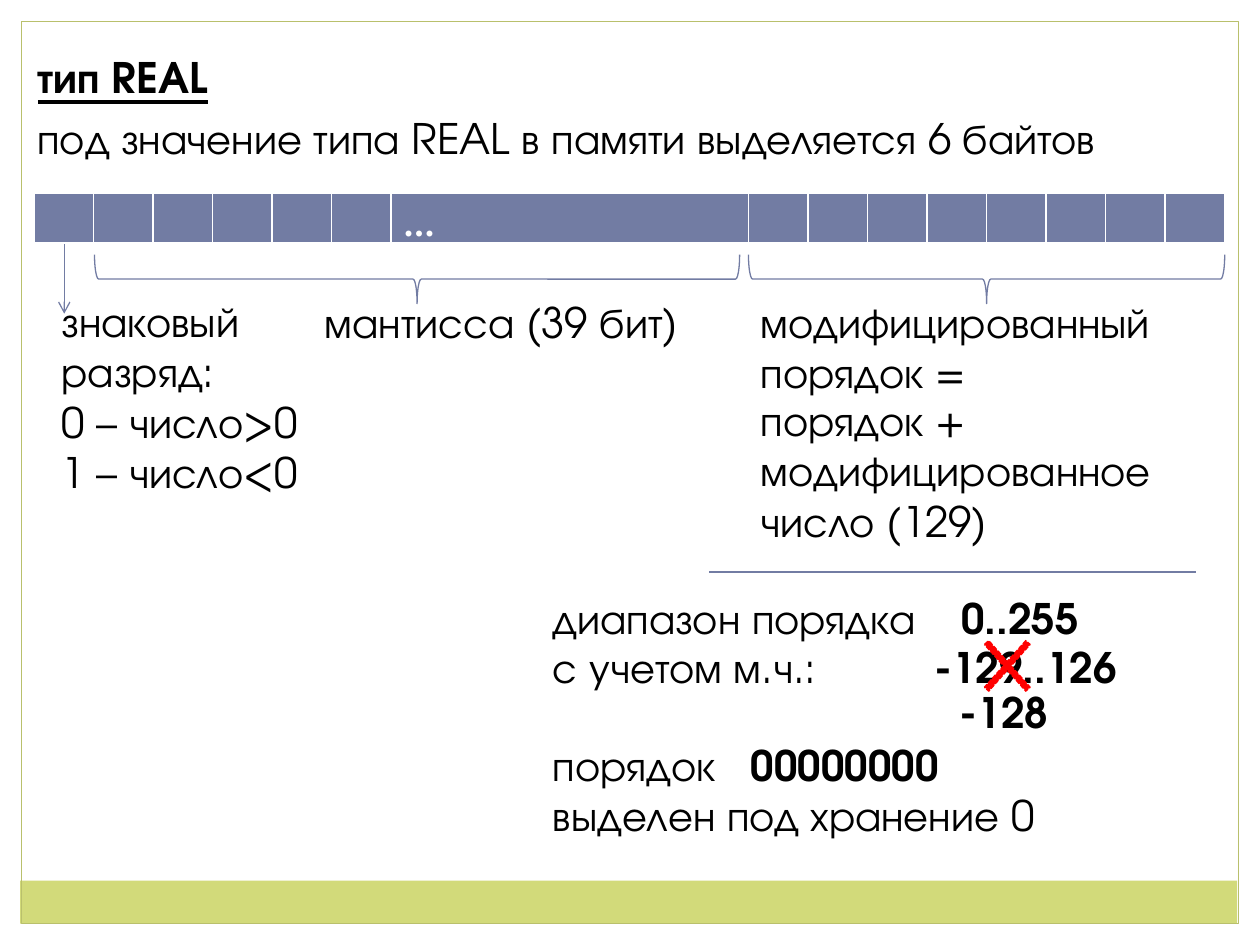
from lxml import etree
from pptx import Presentation
from pptx.dml.color import RGBColor
from pptx.enum.dml import MSO_LINE
from pptx.enum.shapes import MSO_CONNECTOR, MSO_SHAPE
from pptx.enum.text import MSO_ANCHOR, PP_ALIGN
from pptx.oxml.ns import qn
from pptx.util import Inches, Pt

RECTANGLE = MSO_SHAPE.RECTANGLE
BRACE = MSO_SHAPE.RIGHT_BRACE
CALLOUT = MSO_SHAPE.LINE_CALLOUT_2
CROSS = MSO_SHAPE.MATH_MULTIPLY
STRAIGHT = MSO_CONNECTOR.STRAIGHT
DASHED = MSO_LINE.SQUARE_DOT
LEFT = PP_ALIGN.LEFT
TOP, MIDDLE = MSO_ANCHOR.TOP, MSO_ANCHOR.MIDDLE

COLORS = {
    "text": "000000",
    "paper": "FFFFFF",
    "bits": "727CA3",
    "band": "D2DA7A",
    "frame": "B9C06C",
    "wrong": "FF0000",
}
BODY_FONT = "TeX Gyre Adventor"
TABLE_FONT = "TeX Gyre Schola"


def rgb(name):
    return RGBColor.from_string(COLORS[name])


def write(frame, *lines, size=24, font=BODY_FONT, color="text", bold=False,
          underline=False, anchor=TOP, tab=None):
    """Fill a text frame, one paragraph a line; what follows a tab is bold."""
    frame.word_wrap = True
    frame.vertical_anchor = anchor
    for index, line in enumerate(lines):
        paragraph = frame.paragraphs[0] if index == 0 else frame.add_paragraph()
        paragraph.alignment = LEFT
        label, separator, value = line.partition("\t")
        for part, is_bold in ((label, bold), (separator + value, True)):
            if part:
                run = paragraph.add_run()
                run.text = part
                run.font.name = font
                run.font.size = Pt(size)
                run.font.bold = is_bold
                run.font.underline = underline
                run.font.color.rgb = rgb(color)
        if separator:
            stops = etree.SubElement(paragraph._p.get_or_add_pPr(), qn("a:tabLst"))
            etree.SubElement(stops, qn("a:tab"), pos=str(Inches(tab)), algn="l")


class SlideBuilder:
    def __init__(self, slide, line_width=0.75):
        self.slide = slide
        self.line_width = line_width

    def title(self, text, left, top, width, height):
        heading = self.slide.shapes.title
        heading.left, heading.top = Inches(left), Inches(top)
        heading.width, heading.height = Inches(width), Inches(height)
        write(heading.text_frame, text, bold=True, underline=True)

    def text(self, left, top, width, height, *lines, **style):
        box = self.slide.shapes.add_textbox(
            Inches(left), Inches(top), Inches(width), Inches(height))
        write(box.text_frame, *lines, **style)

    def shape(self, kind, left, top, width, height, fill=None, line=None,
              line_width=None, adjustments=()):
        shape = self.slide.shapes.add_shape(
            kind, Inches(left), Inches(top), Inches(width), Inches(height))
        shape.shadow.inherit = False
        for index, value in enumerate(adjustments):
            shape.adjustments[index] = value
        if fill:
            shape.fill.solid()
            shape.fill.fore_color.rgb = rgb(fill)
        else:
            shape.fill.background()
        if line:
            shape.line.color.rgb = rgb(line)
            shape.line.width = Pt(line_width or self.line_width)
        else:
            shape.line.fill.background()
        return shape

    def brace_below(self, left, top, span, depth):
        """Draw a brace that opens upwards over the given span."""
        brace = self.shape(BRACE, left + (span - depth) / 2,
                           top + (depth - span) / 2, depth, span, line="bits")
        brace.rotation = 90

    def line(self, x1, y1, x2, y2, arrow=False):
        connector = self.slide.shapes.add_connector(
            STRAIGHT, Inches(x1), Inches(y1), Inches(x2), Inches(y2))
        connector.line.color.rgb = rgb("bits")
        connector.line.width = Pt(self.line_width)
        if arrow:
            etree.SubElement(connector.line._get_or_add_ln(), qn("a:tailEnd"),
                             type="arrow")
        etree.SubElement(connector._element.spPr, qn("a:effectLst"))

    def bit_row(self, left, top, widths, height, labels):
        table = self.slide.shapes.add_table(
            1, len(widths), Inches(left), Inches(top),
            Inches(sum(widths)), Inches(height)).table
        table.first_row = table.horz_banding = False
        table.rows[0].height = Inches(height)
        for index, width in enumerate(widths):
            table.columns[index].width = Inches(width)
            cell = table.cell(0, index)
            self.cell_borders(cell)
            cell.fill.solid()
            cell.fill.fore_color.rgb = rgb("bits")
            if index in labels:
                write(cell.text_frame, labels[index], size=18,
                      font=TABLE_FONT, color="paper", bold=True)

    def cell_borders(self, cell):
        properties = cell._tc.get_or_add_tcPr()
        for side, width in (("L", 1), ("R", 1), ("T", 1), ("B", 3)):
            border = etree.SubElement(properties, qn(f"a:ln{side}"), w=str(Pt(width)))
            fill = etree.SubElement(border, qn("a:solidFill"))
            etree.SubElement(fill, qn("a:srgbClr"), val=COLORS["paper"])


def main():
    deck = Presentation()
    deck.slide_width, deck.slide_height = Inches(10), Inches(7.5)
    page = SlideBuilder(deck.slides.add_slide(deck.slide_layouts[5]))

    page.shape(RECTANGLE, 0.16, 6.99, 9.66, 0.34, fill="band")
    page.shape(RECTANGLE, 0.17, 0.17, 9.66, 7.16, line="frame")
    page.title("тип REAL", 0.2, 0.36, 1.81, 0.5)
    page.text(0.2, 0.84, 9.61, 0.51,
              "под значение типа REAL в памяти выделяется 6 байтов")

    row_width, gap_width, bits_before, bits_after = 9.45, 2.84, 6, 8
    bit = (row_width - gap_width) / (bits_before + bits_after)
    widths = [bit] * bits_before + [gap_width] + [bit] * bits_after
    page.bit_row(0.27, 1.53, widths, 0.41, {bits_before: "…"})

    page.brace_below(5.94, 2.02, 3.78, 0.39)
    page.brace_below(0.75, 2.02, 5.12, 0.39)
    sign_note = page.shape(CALLOUT, 0.39, 2.36, 2.28, 1.57, fill="paper",
                           adjustments=(0.19, -0.08, 0.19, -0.17, -0.39, -0.03))
    write(sign_note.text_frame, "знаковый", "разряд:", "0 – число>0",
          "1 – число<0", anchor=MIDDLE)
    page.line(0.51, 1.94, 0.51, 2.49, arrow=True)
    page.text(2.48, 2.3, 3.31, 0.51, "мантисса (39 бит)")
    page.text(5.94, 2.3, 3.78, 0.91, "модифицированный", "порядок =")
    page.text(5.94, 3.08, 3.78, 1.31, "порядок +", "модифицированное",
              "число (129)")

    page.line(5.63, 4.54, 9.49, 4.54)
    page.text(4.29, 4.65, 5.28, 0.51, "диапазон порядка\t0..255", tab=3.24)
    page.text(4.29, 5.04, 5.28, 0.51, "с учетом м.ч.:\t-129..126", tab=3.03)
    cross = page.shape(CROSS, 7.68, 4.93, 0.63, 0.71, fill="wrong",
                       line="wrong", line_width=0.9, adjustments=(0.07,))
    cross.line.dash_style = DASHED
    page.text(7.52, 5.4, 1.02, 0.5, "-128", bold=True)
    page.text(4.29, 5.82, 5.28, 0.91, "порядок\t00000000",
              "выделен под хранение 0", tab=1.57)

    deck.save("out.pptx")


if __name__ == "__main__":
    main()
